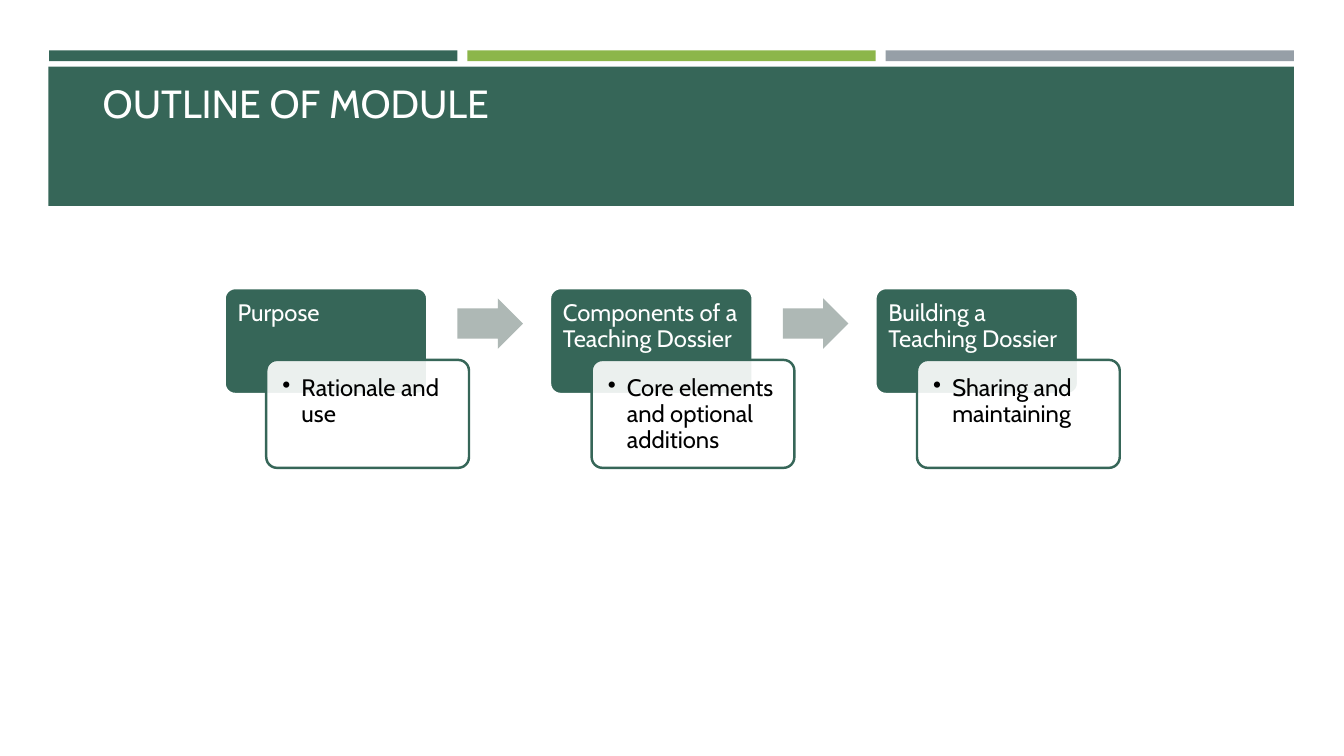
from lxml.etree import SubElement
from pptx import Presentation
from pptx.dml.color import RGBColor
from pptx.enum.shapes import MSO_SHAPE as Preset
from pptx.enum.text import MSO_ANCHOR as Anchor, PP_ALIGN as Align
from pptx.oxml.ns import qn
from pptx.util import Cm, Pt

FONT = "Cabin"
GREEN, LIME, GREY = "366658", "8CB64A", "969FA7"
ARROW, WHITE, BLACK = "AEB8B5", "FFFFFF", "000000"
BAR_LEFT, BAR_STEP = 1.24, 10.54
STEP_LEFT, STEP_PITCH = 5.66, 8.2
STEPS = [
    ("Purpose", "Rationale and use"),
    ("Components of a Teaching Dossier", "Core elements and optional additions"),
    ("Building a Teaching Dossier", "Sharing and maintaining"),
]


def paint(color_format, color):
    """Set a colour from a hex string."""
    color_format.rgb = RGBColor.from_string(color)


def add_box(page, preset, place, fill, line=None, adjustments=()):
    """Add a filled preset shape at a place given in centimetres."""
    box = page.shapes.add_shape(preset, *map(Cm, place))
    box.shadow.inherit = False
    box.fill.solid()
    paint(box.fill.fore_color, fill)
    if line:
        paint(box.line.color, line)
        box.line.width = Pt(1.75)
    else:
        box.line.fill.background()
    for index, value in enumerate(adjustments):
        box.adjustments[index] = value
    return box


def write(box, text, size, color, anchor=Anchor.TOP, inset=None, spacing=None):
    """Write one left-aligned paragraph in a box and return it."""
    frame = box.text_frame
    frame.word_wrap = True
    frame.vertical_anchor = anchor
    if inset is not None:
        frame.margin_left = frame.margin_right = Cm(inset)
        frame.margin_top = frame.margin_bottom = Cm(inset)
    para = frame.paragraphs[0]
    para.alignment = Align.LEFT
    para.line_spacing = spacing
    span = para.add_run()
    span.text = text
    span.font.name = FONT
    span.font.size = Pt(size)
    paint(span.font.color, color)
    return para


def add_bullet(para, indent):
    """Give a paragraph a round bullet with a hanging indent."""
    properties = para._p.get_or_add_pPr()
    properties.set("marL", str(Cm(indent)))
    properties.set("indent", str(-Cm(indent)))
    SubElement(properties, qn("a:buChar"), char="•")


def set_opacity(box, percent):
    """Make the solid fill of a box partly transparent."""
    color = box._element.spPr.find(qn("a:solidFill"))[0]
    SubElement(color, qn("a:alpha"), val=str(percent * 1000))


def add_header(page, title):
    """Add the three colour bars and the title banner."""
    for index, color in enumerate((GREEN, LIME, GREY)):
        left = BAR_LEFT + index * BAR_STEP
        add_box(page, Preset.RECTANGLE, (left, 1.27, 10.29, 0.27), color)
    add_box(page, Preset.RECTANGLE, (1.22, 1.68, 31.39, 3.51), GREEN)
    box = page.shapes.add_textbox(Cm(2.34), Cm(1.02), Cm(29.21), Cm(2.29))
    write(box, title, 28, WHITE, Anchor.BOTTOM)


def add_step(page, left, heading, detail):
    """Add a heading card with its overlapping detail card."""
    card = add_box(page, Preset.ROUNDED_RECTANGLE, (left, 7.26, 5.11, 2.67),
                   GREEN, WHITE, [0.1])
    write(card, heading, 17, WHITE, inset=0.25, spacing=0.9)
    note = add_box(page, Preset.ROUNDED_RECTANGLE, (left + 1.05, 9.07, 5.11, 2.72),
                   WHITE, GREEN, [0.1])
    set_opacity(note, 90)
    add_bullet(write(note, detail, 17, BLACK, inset=0.33, spacing=0.9), 0.48)


def main():
    """Build the slide and save it."""
    deck = Presentation()
    deck.slide_width, deck.slide_height = Cm(33.87), Cm(19.05)
    page = deck.slides.add_slide(deck.slide_layouts[6])
    add_header(page, "OUTLINE OF MODULE")
    for index, (heading, detail) in enumerate(STEPS):
        left = STEP_LEFT + index * STEP_PITCH
        add_step(page, left, heading, detail)
        if index < len(STEPS) - 1:
            add_box(page, Preset.RIGHT_ARROW, (left + 5.87, 7.52, 1.65, 1.27),
                    ARROW, adjustments=[0.6, 0.5])
    deck.save("out.pptx")


if __name__ == "__main__":
    main()
